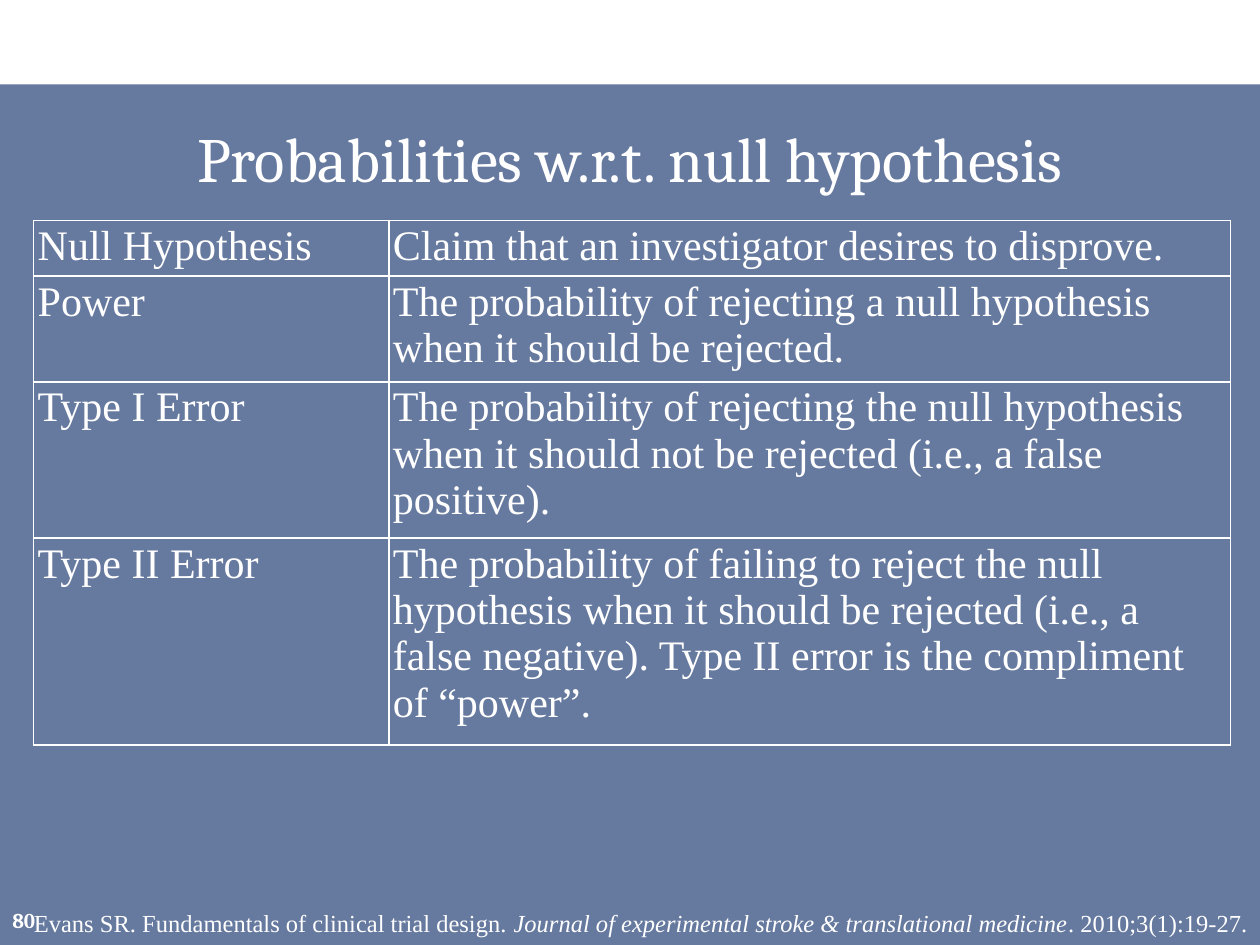
from typing import NamedTuple

from lxml import etree
from pptx import Presentation
from pptx.dml.color import RGBColor
from pptx.enum import shapes, text
from pptx.oxml import ns
from pptx.util import Cm, Pt

WHITE = RGBColor(0xFF, 0xFF, 0xFF)
NAVY = RGBColor(0x00, 0x20, 0x60)
SERIF = "Times New Roman"
HEADING = "Cambria"
WIDTH, HEIGHT = 25.4, 19.05
BAND_TOP = 1.7


class Box(NamedTuple):
    left: float
    top: float
    width: float
    height: float

    def lengths(self) -> list:
        return [Cm(v) for v in self]


class Definition(NamedTuple):
    term: str
    meaning: str
    height: float


DEFINITIONS = [
    Definition("Null Hypothesis", "Claim that an investigator desires to disprove.", 0.81),
    Definition("Power", "The probability of rejecting a null hypothesis when it should "
               "be rejected.", 2.06),
    Definition("Type I Error", "The probability of rejecting the null hypothesis when it "
               "should not be rejected (i.e., a false positive).", 2.06),
    Definition("Type II Error", "The probability of failing to reject the null hypothesis "
               "when it should be rejected (i.e., a false negative). Type II error is the "
               "compliment of “power”.", 2.06),
]
COLUMN_WIDTHS = (7.16, 16.97)


def add_run(p, content: str, *, size: float, font: str = SERIF,
            bold: bool = False, italic: bool = False) -> None:
    r = p.add_run()
    r.text = content
    r.font.name = font
    r.font.size = Pt(size)
    r.font.bold = bold
    r.font.italic = italic
    r.font.color.rgb = WHITE


def add_text_box(s, box: Box, *, align=text.PP_ALIGN.LEFT, anchor=text.MSO_ANCHOR.MIDDLE):
    """Add an empty wrapping text box and return its paragraph."""
    tf = s.shapes.add_textbox(*box.lengths()).text_frame
    tf.word_wrap = True
    tf.vertical_anchor = anchor
    p = tf.paragraphs[0]
    p.alignment = align
    return p


def add_band(s) -> None:
    sp = s.shapes.add_shape(shapes.MSO_SHAPE.RECTANGLE,
                            *Box(0, BAND_TOP, WIDTH, HEIGHT - BAND_TOP).lengths())
    sp.shadow.inherit = False
    sp.line.fill.background()
    sp.fill.solid()
    sp.fill.fore_color.rgb = NAVY
    color = sp.fill._xPr.find(".//" + ns.qn("a:srgbClr"))
    etree.SubElement(color, ns.qn("a:alpha"), val="60000")


def set_borders(cell) -> None:
    tc_pr = cell._tc.get_or_add_tcPr()
    for i, side in enumerate(("lnL", "lnR", "lnT", "lnB")):
        ln = etree.Element(ns.qn(f"a:{side}"), w=str(Pt(1)))
        fill = etree.SubElement(ln, ns.qn("a:solidFill"))
        etree.SubElement(fill, ns.qn("a:srgbClr"), val=str(WHITE))
        tc_pr.insert(i, ln)


def fill_cell(cell, content: str) -> None:
    cell.fill.background()
    cell.margin_left = cell.margin_right = Cm(0.08)
    cell.margin_top = cell.margin_bottom = Cm(0.05)
    add_run(cell.text_frame.paragraphs[0], content, size=24)
    set_borders(cell)


def add_definitions(s) -> None:
    box = Box(0.68, 4.45, sum(COLUMN_WIDTHS), sum(d.height for d in DEFINITIONS))
    table = s.shapes.add_table(len(DEFINITIONS), len(COLUMN_WIDTHS), *box.lengths()).table
    table.first_row = table.horz_banding = False
    for column, width in zip(table.columns, COLUMN_WIDTHS):
        column.width = Cm(width)
    for i, d in enumerate(DEFINITIONS):
        table.rows[i].height = Cm(d.height)
        fill_cell(table.cell(i, 0), d.term)
        fill_cell(table.cell(i, 1), d.meaning)


def main() -> None:
    prs = Presentation()
    prs.slide_width, prs.slide_height = Cm(WIDTH), Cm(HEIGHT)
    s = prs.slides.add_slide(prs.slide_layouts[6])

    add_band(s)
    title = add_text_box(s, Box(0.64, 2.12, 24.13, 2.12), align=text.PP_ALIGN.CENTER)
    add_run(title, "Probabilities w.r.t. null hypothesis", size=36, font=HEADING)
    add_definitions(s)

    citation = add_text_box(s, Box(0, 18.19, WIDTH, 0.86), align=text.PP_ALIGN.RIGHT,
                            anchor=text.MSO_ANCHOR.TOP)
    add_run(citation, "Evans SR. Fundamentals of clinical trial design. ", size=14)
    add_run(citation, "Journal of experimental stroke & translational medicine",
            size=14, italic=True)
    add_run(citation, ". 2010;3(1):19-27.", size=14)

    number = add_text_box(s, Box(0, 18.03, 1.27, 1.02))
    add_run(number, "80", size=12, font=HEADING, bold=True)

    prs.save("out.pptx")


if __name__ == "__main__":
    main()
